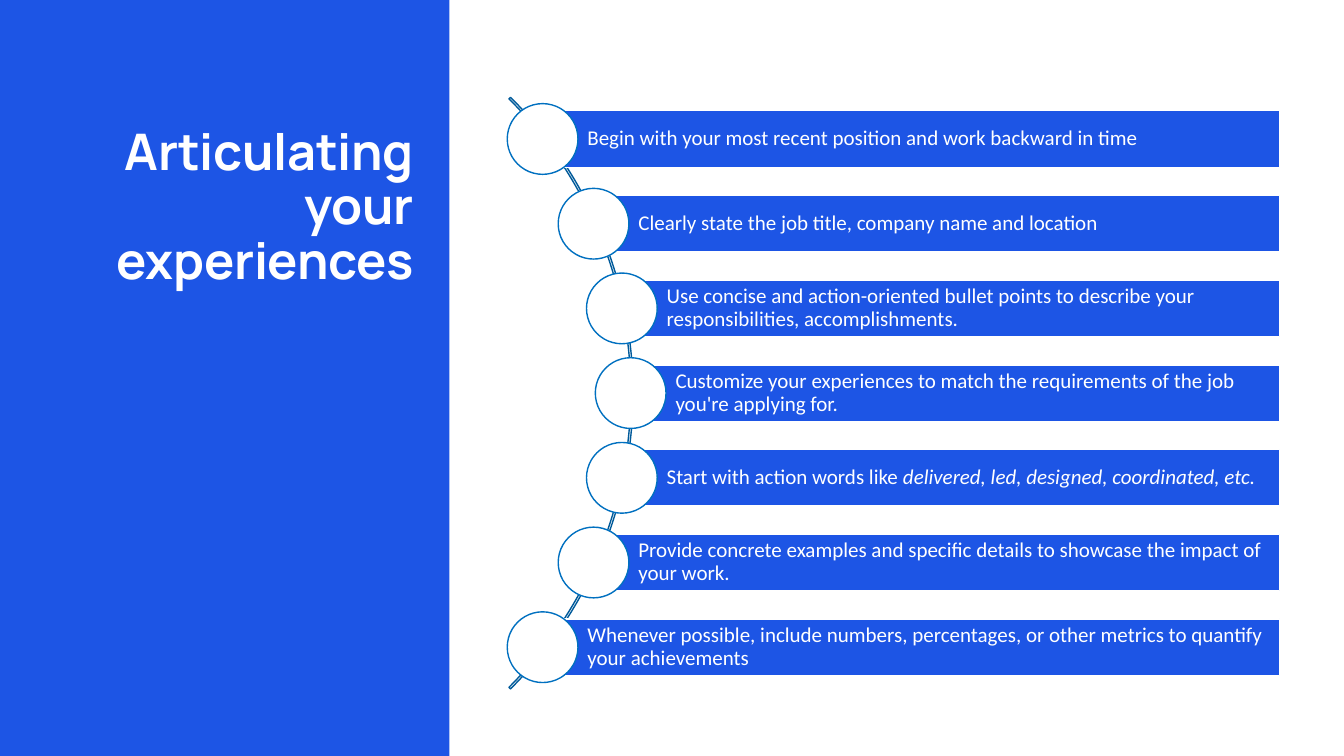
from dataclasses import dataclass

from pptx import Presentation
from pptx.dml.color import RGBColor
from pptx.enum import shapes, text
from pptx.util import Pt

COLORS = {"blue": "1D55E5", "white": "FFFFFF", "arc": "005A9A", "ring": "0070C0"}

MIDDLE_Y, STEP = 280.8, 60.5
BAR_RIGHT, BAR_HEIGHT, DOT = 914, 40.4, 50.5
# Bar starts along the arc, by number of steps from its middle
BAR_LEFTS = (450.5, 444.2, 424, 387.6)
BAR_FORMAT = {
    "margin_left": Pt(32), "margin_right": Pt(2.8),
    "margin_top": Pt(2.8), "margin_bottom": Pt(2.8),
    "vertical_anchor": text.MSO_ANCHOR.MIDDLE, "word_wrap": True,
}
TITLE_FORMAT = {
    "margin_left": Pt(7.2), "margin_right": Pt(7.2),
    "margin_top": Pt(3.6), "margin_bottom": Pt(3.6),
    "vertical_anchor": text.MSO_ANCHOR.TOP, "word_wrap": True,
}


@dataclass
class Tip:
    wording: str
    examples: str = ""


TIPS = [
    Tip("Begin with your most recent position and work backward in time"),
    Tip("Clearly state the job title, company name and location"),
    Tip("Use concise and action-oriented bullet points to describe your "
        "responsibilities, accomplishments."),
    Tip("Customize your experiences to match the requirements of the job "
        "you're applying for."),
    Tip("Start with action words like ",
        "delivered, led, designed, coordinated, etc."),
    Tip("Provide concrete examples and specific details to showcase the impact "
        "of your work."),
    Tip("Whenever possible, include numbers, percentages, or other metrics to "
        "quantify your achievements"),
]


def color(name: str) -> RGBColor:
    return RGBColor.from_string(COLORS[name])


def apply(target, formats: dict) -> None:
    for name, value in formats.items():
        setattr(target, name, value)


def add_shape(slide, kind, left: float, top: float, width: float, height: float,
              fill: str = "", line: str = ""):
    shape = slide.shapes.add_shape(kind, Pt(left), Pt(top), Pt(width), Pt(height))
    shape.shadow.inherit = False
    if fill:
        shape.fill.solid()
        shape.fill.fore_color.rgb = color(fill)
    else:
        shape.fill.background()
    if line:
        shape.line.color.rgb = color(line)
        shape.line.width = Pt(1)
    else:
        shape.line.fill.background()
    return shape


def add_run(paragraph, wording: str, formats: dict):
    run = paragraph.add_run()
    run.text = wording
    apply(run.font, formats)
    run.font.color.rgb = color("white")
    return run


def add_title(slide, wording: str) -> None:
    title = slide.shapes.add_textbox(Pt(49.7), Pt(87.1), Pt(252.7), Pt(384.5))
    apply(title.text_frame, TITLE_FORMAT)
    paragraph = title.text_frame.paragraphs[0]
    apply(paragraph, {"alignment": text.PP_ALIGN.RIGHT, "line_spacing": 0.9})
    run = add_run(paragraph, wording, {"name": "Manrope", "size": Pt(36), "bold": True})
    run.font._element.set("spc", "-20")


def add_tip(slide, index: int, tip: Tip) -> None:
    from_middle = index - len(TIPS) // 2
    left = BAR_LEFTS[abs(from_middle)]
    center_y = MIDDLE_Y + from_middle * STEP
    bar = add_shape(slide, shapes.MSO_SHAPE.RECTANGLE, left, center_y - BAR_HEIGHT / 2,
                    BAR_RIGHT - left, BAR_HEIGHT, "blue", "white")
    apply(bar.text_frame, BAR_FORMAT)
    paragraph = bar.text_frame.paragraphs[0]
    apply(paragraph, {"alignment": text.PP_ALIGN.LEFT, "line_spacing": 0.9})
    tip_font = {"name": "Calibri", "size": Pt(15)}
    add_run(paragraph, tip.wording, tip_font)
    if tip.examples:
        add_run(paragraph, tip.examples, {**tip_font, "italic": True})
    add_shape(slide, shapes.MSO_SHAPE.OVAL, left - DOT / 2, center_y - DOT / 2,
              DOT, DOT, "white", "ring")


def main() -> None:
    deck = Presentation()
    apply(deck, {"slide_width": Pt(960), "slide_height": Pt(540)})
    slide = deck.slides.add_slide(deck.slide_layouts[6])

    # Side panel and title
    add_shape(slide, shapes.MSO_SHAPE.RECTANGLE, 0, 0, 321, 540, "blue")
    add_title(slide, "Articulating your experiences")

    # Arc behind the tips
    arc = add_shape(slide, shapes.MSO_SHAPE.BLOCK_ARC, -145.4, -18, 597.6, 597.6,
                    line="arc")
    for position, value in enumerate((189, 27, 0.0026)):
        arc.adjustments[position] = value

    # Tips along the arc
    for index, tip in enumerate(TIPS):
        add_tip(slide, index, tip)

    deck.save("out.pptx")


if __name__ == "__main__":
    main()
